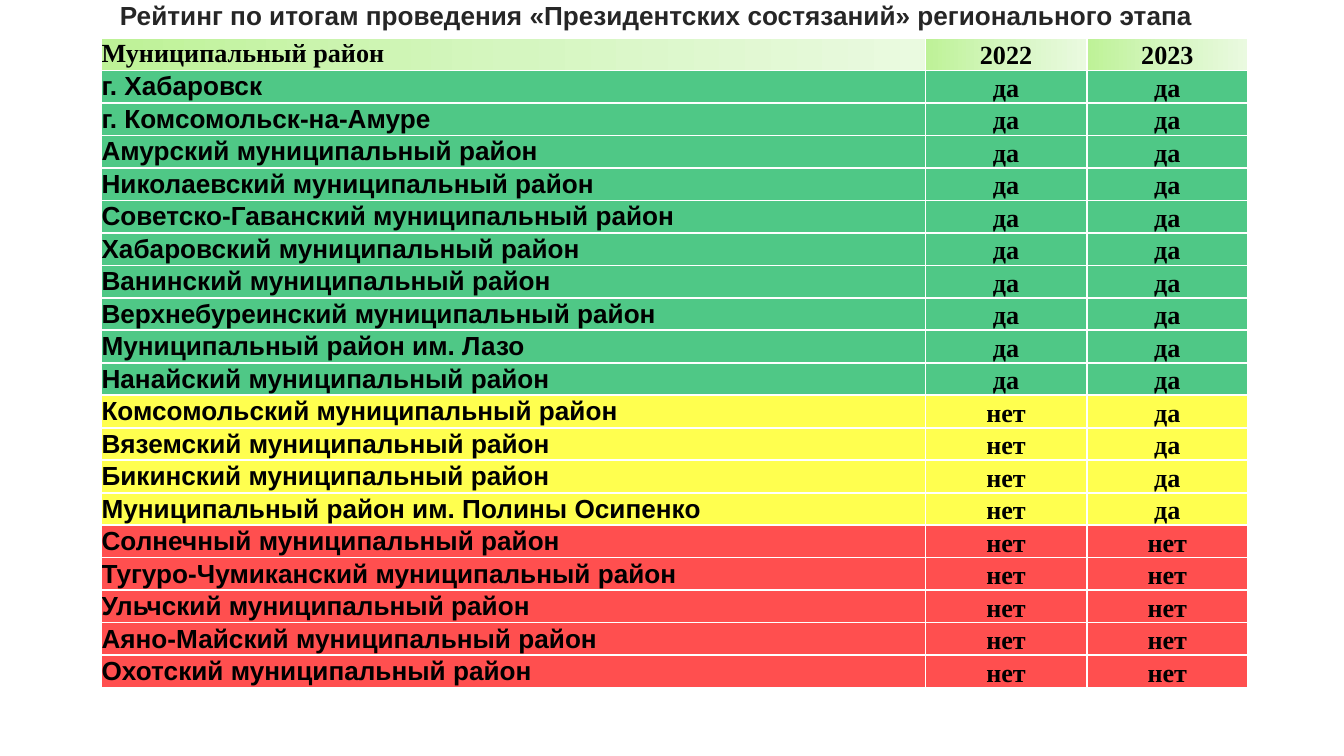
"""Build the regional ranking slide: districts by participation in 2022 and 2023."""
import copy

import lxml.etree
import pptx
import pptx.dml.color
import pptx.enum.text
import pptx.oxml.ns
import pptx.util

Pt = pptx.util.Pt
ALIGN = pptx.enum.text.PP_ALIGN
ANCHOR = pptx.enum.text.MSO_ANCHOR
qn = pptx.oxml.ns.qn


def rgb(value):
    return pptx.dml.color.RGBColor.from_string(value)


def style_text(frame, font_name, color, align):
    paragraph = frame.paragraphs[0]
    paragraph.alignment = align
    font = paragraph.runs[0].font
    font.name, font.size, font.bold = font_name, Pt(14), True
    font.color.rgb = rgb(color)


groups = [
    ("00B050", "да", "да", [
        "г. Хабаровск",
        "г. Комсомольск-на-Амуре",
        "Амурский муниципальный район",
        "Николаевский муниципальный район",
        "Советско-Гаванский муниципальный район",
        "Хабаровский муниципальный район",
        "Ванинский муниципальный район",
        "Верхнебуреинский муниципальный район",
        "Муниципальный район им. Лазо",
        "Нанайский муниципальный район",
    ]),
    ("FFFF00", "нет", "да", [
        "Комсомольский муниципальный район",
        "Вяземский муниципальный район",
        "Бикинский муниципальный район",
        "Муниципальный район им. Полины Осипенко",
    ]),
    ("FF0000", "нет", "нет", [
        "Солнечный муниципальный район",
        "Тугуро-Чумиканский муниципальный район",
        "Ульчский муниципальный район",
        "Аяно-Майский муниципальный район",
        "Охотский муниципальный район",
    ]),
]
header_gradient = ["BEF297", "D5F6C0", "EAFAE0"]
rows = [(None, "Муниципальный район", "2022", "2023")]
for group_color, result_2022, result_2023, districts in groups:
    rows += [(group_color, district, result_2022, result_2023) for district in districts]

presentation = pptx.Presentation()
presentation.slide_width, presentation.slide_height = Pt(720), Pt(405)
slide = presentation.slides.add_slide(presentation.slide_layouts[5])

title = slide.shapes.title
title.left, title.top, title.width, title.height = Pt(39.6), Pt(0), Pt(624.2), Pt(16)
heading = title.text_frame
heading.text = "Рейтинг по итогам проведения «Президентских состязаний» регионального этапа"
heading.word_wrap = True
heading.auto_size = pptx.enum.text.MSO_AUTO_SIZE.NONE
heading.vertical_anchor = ANCHOR.MIDDLE
heading.margin_left = heading.margin_right = Pt(5)
heading.margin_top = heading.margin_bottom = Pt(3)
style_text(heading, "Arial", "262626", ALIGN.CENTER)

row_height = 17.42
ranking = slide.shapes.add_table(
    len(rows), 3, Pt(54.4), Pt(20.3), Pt(614.2), Pt(row_height * len(rows))).table
ranking.first_row = ranking.horz_banding = False
for column, width in zip(ranking.columns, [441.4, 86.4, 86.4]):
    column.width = Pt(width)

for row_index, (row_color, *values) in enumerate(rows):
    ranking.rows[row_index].height = Pt(row_height)
    for column_index, value in enumerate(values):
        cell = ranking.cell(row_index, column_index)
        cell.text_frame.text = value
        cell.margin_left = cell.margin_right = cell.margin_top = cell.margin_bottom = 0
        is_district = column_index == 0
        cell.vertical_anchor = ANCHOR.MIDDLE if is_district else ANCHOR.BOTTOM
        font_name = "Arial" if is_district and row_color else "Times New Roman"
        style_text(cell.text_frame, font_name, "000000",
                   ALIGN.LEFT if is_district else ALIGN.CENTER)

        properties = cell._tc.get_or_add_tcPr()
        if row_color:
            cell.fill.solid()
            cell.fill.fore_color.rgb = rgb(row_color)
            shade = properties.find(".//" + qn("a:srgbClr"))
            lxml.etree.SubElement(shade, qn("a:alpha"), val="69000")
        else:
            cell.fill.gradient()
            cell.fill.gradient_angle = 0
            first_stop = properties.find(".//" + qn("a:gs"))
            first_stop.addnext(copy.deepcopy(first_stop))
            for position, (stop, color) in enumerate(zip(cell.fill.gradient_stops, header_gradient)):
                stop.position = position / 2
                stop.color.rgb = rgb(color)

        for order, side in enumerate(["a:lnL", "a:lnR", "a:lnT", "a:lnB"]):
            border = lxml.etree.Element(qn(side), w=str(Pt(1)))
            line_fill = lxml.etree.SubElement(border, qn("a:solidFill"))
            lxml.etree.SubElement(line_fill, qn("a:srgbClr"), val="FFFFFF")
            properties.insert(order, border)

presentation.save("out.pptx")
